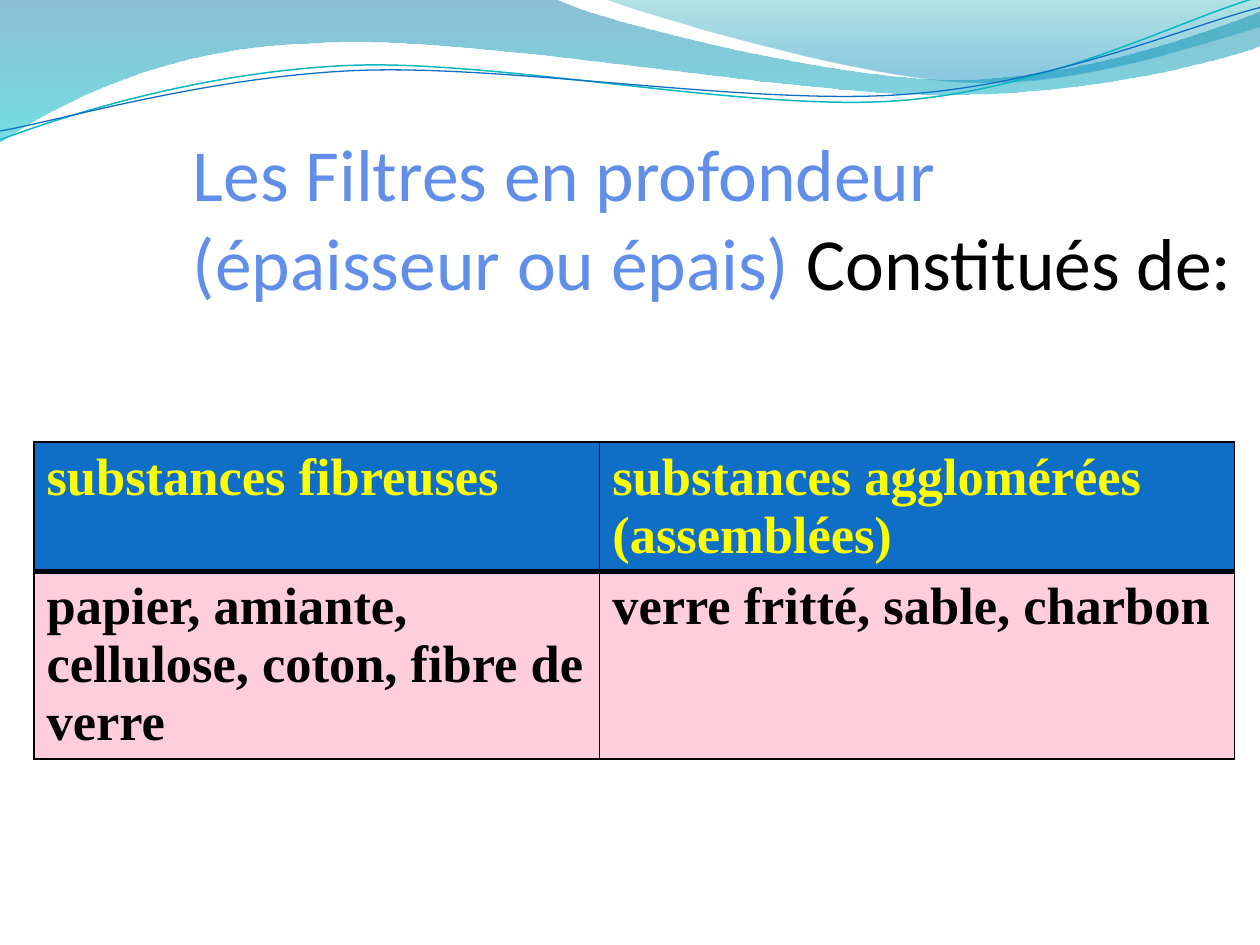
from lxml import etree
from pptx import Presentation
from pptx.dml.color import RGBColor
from pptx.enum.text import MSO_ANCHOR, PP_ALIGN
from pptx.oxml.ns import qn
from pptx.util import Inches, Pt

BLUE_BAND = [
    [(0, 0)],
    [(4.4, -0.01)],
    [(4.76, 0.17), (6.64, 0.63), (7.58, 0.63)],
    [(8.53, 0.63), (9.58, 0.26), (10, 0.09)],
    [(10.01, 0.36)],
    [(9.83, 0.44), (8.7, 0.76), (7.46, 0.75)],
    [(6.22, 0.75), (3.82, 0.28), (2.57, 0.34)],
    [(1.29, 0.36), (0.46, 0.83), (-0.01, 1.13)],
    [(0, 0)],
]
PALE_BAND = [
    [(4.79, -0.01)],
    [(5.09, 0.11), (6.82, 0.62), (7.69, 0.65)],
    [(8.56, 0.69), (9.61, 0.32), (10, 0.21)],
    [(10, 0)],
    [(4.79, -0.01)],
]
TEAL_LINE = [
    [(0, 1.11)],
    [(0.48, 0.93), (1.58, 0.57), (2.77, 0.52)],
    [(3.95, 0.47), (5.93, 0.89), (7.13, 0.8)],
    [(8.33, 0.71), (9.38, 0.15), (9.98, -0.02)],
]
BLUE_LINE = [
    [(0, 1.04)],
    [(0.47, 0.96), (1.64, 0.61), (2.83, 0.56)],
    [(4.03, 0.51), (5.97, 0.84), (7.17, 0.75)],
    [(8.36, 0.67), (9.41, 0.21), (10, 0.06)],
]


def rgb(value):
    return RGBColor.from_string(value)


def sub(parent, tag, **attrs):
    return etree.SubElement(parent, qn(tag), attrs)


def add_line_fill(ln, color):
    sub(sub(ln, "a:solidFill"), "a:srgbClr", val=color)


def bend_segments(sp, outline):
    steps = iter(list(sp._element.spPr.iter(qn("a:lnTo"))))
    for segment in outline[1:]:
        group = [next(steps) for _ in segment]
        if len(group) == 3:
            curve = etree.Element(qn("a:cubicBezTo"))
            group[0].addprevious(curve)
            for step in group:
                curve.append(step[0])
                step.getparent().remove(step)


def add_wave(slide, outline, left, top, close):
    points = [
        (Inches(left + x), Inches(top + y)) for segment in outline for x, y in segment
    ]
    builder = slide.shapes.build_freeform(*points[0])
    builder.add_line_segments(points[1:], close=close)
    sp = builder.convert_to_shape()
    bend_segments(sp, outline)
    sp.shadow.inherit = False
    return sp


def add_band(slide, outline, left, top, stops):
    sp = add_wave(slide, outline, left, top, True)
    sp.line.fill.background()
    sp.fill.gradient()
    sp.fill.gradient_angle = 270
    for stop, (position, color, _) in zip(sp.fill.gradient_stops, stops):
        stop.position = position
        stop.color.rgb = rgb(color)
    colors = sp._element.spPr.iter(qn("a:srgbClr"))
    for clr, (_, _, opacity) in zip(colors, stops):
        sub(clr, "a:alpha", val=str(opacity * 1000))


def add_curve(slide, outline, left, top, color, width):
    sp = add_wave(slide, outline, left, top, False)
    sp.fill.background()
    sp.line.color.rgb = rgb(color)
    sp.line.width = Pt(width)


def add_waves(slide, left, top):
    add_band(slide, BLUE_BAND, left, top, [(0, "0074A1", 45), (1, "00C6CF", 55)])
    add_band(slide, PALE_BAND, left, top, [(0, "00A1A9", 30), (0.8, "008BBF", 45)])
    add_curve(slide, TEAL_LINE, left, top, "0AB8BF", 0.85)
    add_curve(slide, BLUE_LINE, left, top, "0F6FC6", 0.75)


def place_title(slide, left, top, width, height):
    title = slide.shapes.title
    title.left, title.top = Inches(left), Inches(top)
    title.width, title.height = Inches(width), Inches(height)
    tf = title.text_frame
    tf.word_wrap = True
    tf.vertical_anchor = MSO_ANCHOR.BOTTOM
    tf.margin_left = tf.margin_right = 0
    tf.margin_top = Inches(0.05)
    tf.margin_bottom = Inches(0.7)
    p = tf.paragraphs[0]
    p.alignment = PP_ALIGN.LEFT
    p._p.get_or_add_pPr().set("marL", str(Inches(0.53)))
    for text, color in [
        ("Les Filtres en profondeur (épaisseur ou épais) ", "608EE8"),
        ("Constitués de:", "000000"),
    ]:
        r = p.add_run()
        r.text = text
        r.font.size = Pt(42)
        r.font.name = "Calibri"
        add_line_fill(sub(r.font._element, "a:ln", w=str(Pt(0.5))), "0A4D89")
        r.font.color.rgb = rgb(color)
    slide.shapes._spTree.append(title._element)


def style_cell(cell, text, fill, color, borders):
    tcPr = cell._tc.get_or_add_tcPr()
    for side, width in borders.items():
        add_line_fill(sub(tcPr, f"a:ln{side}", w=str(Pt(width))), "000000")
    cell.fill.solid()
    cell.fill.fore_color.rgb = rgb(fill)
    cell.text = text
    font = cell.text_frame.paragraphs[0].runs[0].font
    font.name = "Times New Roman"
    font.size = Pt(30)
    font.bold = True
    font.color.rgb = rgb(color)


def add_substances(slide, left, top, widths, heights):
    rows = [
        (["substances fibreuses", "substances agglomérées (assemblées)"],
         "0F6FC6", "FFFF00", {"L": 1, "R": 1, "T": 1, "B": 3}),
        (["papier, amiante, cellulose, coton, fibre de verre",
          "verre fritté, sable, charbon"],
         "FFCEDB", "000000", {"L": 1, "R": 1, "T": 3, "B": 1}),
    ]
    table = slide.shapes.add_table(
        len(rows), len(widths), Inches(left), Inches(top),
        Inches(sum(widths)), Inches(sum(heights)),
    ).table
    for column, width in zip(table.columns, widths):
        column.width = Inches(width)
    for row, height, (texts, fill, color, borders) in zip(table.rows, heights, rows):
        row.height = Inches(height)
        for cell, text in zip(row.cells, texts):
            style_cell(cell, text, fill, color, borders)


def main():
    prs = Presentation()
    prs.slide_width, prs.slide_height = Inches(10), Inches(7.5)
    slide = prs.slides.add_slide(prs.slide_layouts[5])
    add_waves(slide, 0, 0)
    place_title(slide, 1, 0.75, 9, 2.37)
    add_substances(slide, 0.27, 3.51, [4.49, 5.04], [1.02, 1.49])
    prs.save("out.pptx")


if __name__ == "__main__":
    main()
